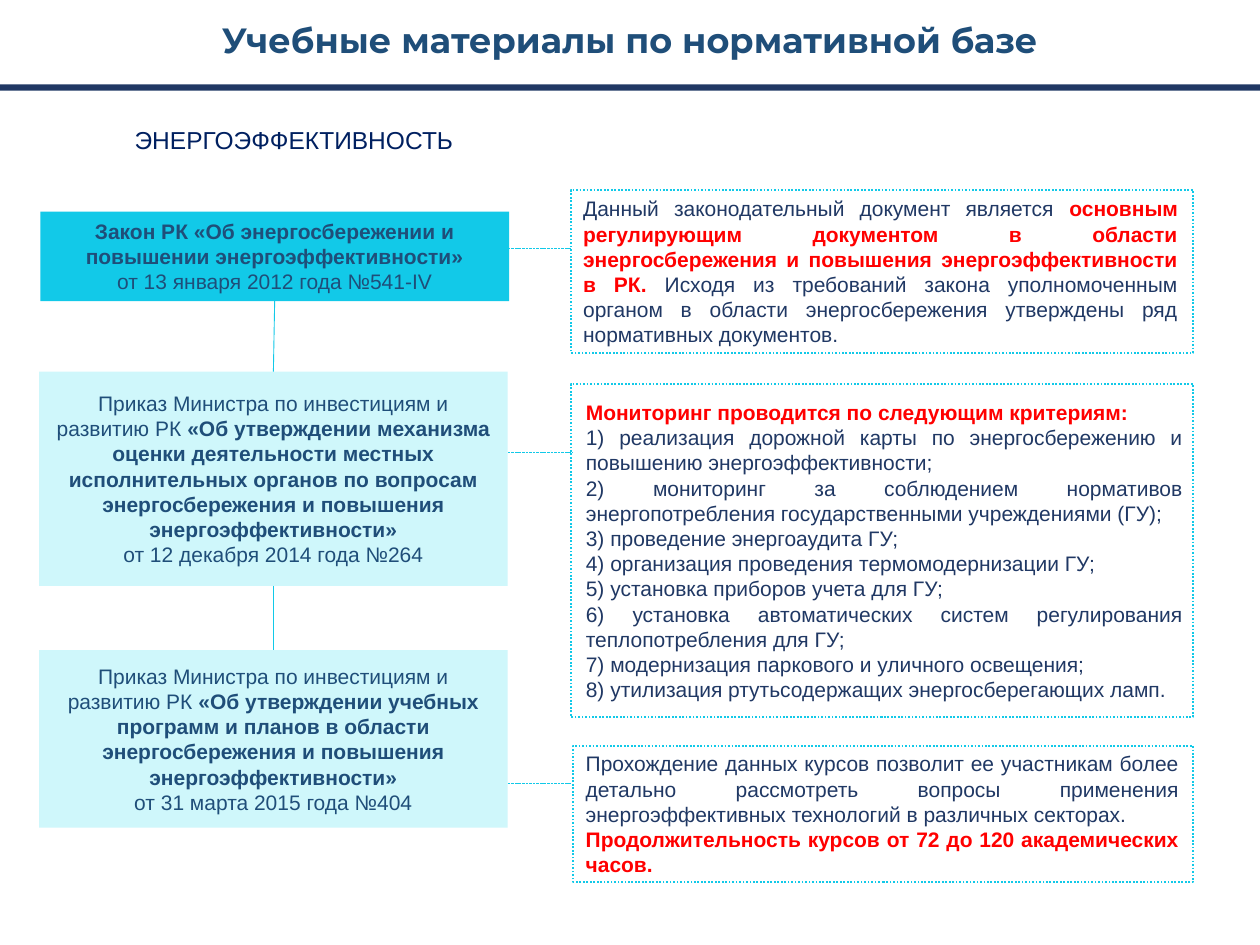
from lxml.etree import SubElement
from pptx import Presentation
from pptx.dml.color import RGBColor
from pptx.enum.dml import MSO_LINE
from pptx.enum.shapes import MSO_CONNECTOR, MSO_SHAPE
from pptx.enum.text import MSO_ANCHOR as ANCHOR, PP_ALIGN as ALIGN
from pptx.oxml.ns import qn
from pptx.util import Inches, Pt

W, H = Inches(10), Inches(7.5)
NAVY, BLUE, RED, CYAN, PALE = "203864", "1F4E79", "FF0000", "12C9E8", "CFF7FB"

CARDS = [
    ((3.2, 22.4, 37.2, 9.47), CYAN, 0.1, [
        [("Закон РК «Об энергосбережении и повышении энергоэффективности»", True)],
        [("от 13 января 2012 года №541-IV", False)]]),
    ((3.1, 39.33, 37.2, 22.67), PALE, 0.05, [
        [("Приказ Министра по инвестициям и", False)],
        [("развитию РК ", False),
         ("«Об утверждении механизма оценки деятельности местных исполнительных "
          "органов по вопросам энергосбережения и повышения энергоэффективности»", True)],
        [("от 12 декабря 2014 года №264", False)]]),
    ((3.1, 68.8, 37.2, 18.8), PALE, 0.05, [
        [("Приказ Министра по инвестициям и", False)],
        [("развитию РК ", False),
         ("«Об утверждении учебных программ и планов в области "
          "энергосбережения и повышения энергоэффективности»", True)],
        [("от 31 марта 2015 года №404", False)]]),
]

CRITERIA = [
    "реализация дорожной карты по энергосбережению и повышению энергоэффективности;",
    "мониторинг за соблюдением нормативов энергопотребления государственными учреждениями (ГУ);",
    "проведение энергоаудита ГУ;",
    "организация проведения термомодернизации ГУ;",
    "установка приборов учета для ГУ;",
    "установка автоматических систем регулирования теплопотребления для ГУ;",
    "модернизация паркового и уличного освещения;",
    "утилизация ртутьсодержащих энергосберегающих ламп.",
]

NOTES = [
    ((45.3, 20.13, 49.4, 17.2), (0.1, 0.12), [
        [("Данный законодательный документ является ", False),
         ("основным регулирующим документом в области энергосбережения "
          "и повышения энергоэффективности в РК. ", True),
         ("Исходя из требований закона уполномоченным органом в области "
          "энергосбережения утверждены ряд нормативных документов.", False)]]),
    ((45.3, 40.67, 49.4, 35.2), (0.12, 0.08), [
        [("Мониторинг проводится по следующим критериям:", True)],
        *([(f"{n}) {text}", False)] for n, text in enumerate(CRITERIA, 1))]),
    ((45.5, 78.93, 49.2, 14.4), (0.1, 0.11), [
        [("Прохождение данных курсов позволит ее участникам более детально рассмотреть "
          "вопросы применения энергоэффективных технологий в различных секторах.", False)],
        [("Продолжительность курсов от 72 до 120 академических часов.", True)]]),
]

LINKS = [(26.27, 45.3), (47.87, 45.5), (82.93, 45.3)]


def rgb(value):
    return RGBColor.from_string(value)


def x(share):
    return int(W * share / 100)


def y(share):
    return int(H * share / 100)


def place(box):
    left, top, width, height = box
    return x(left), y(top), x(width), y(height)


def style(r, size, color, bold=False, font="Arial"):
    r.font.name, r.font.size, r.font.bold = font, Pt(size), bold
    r.font.color.rgb = rgb(color)


def add_rect(slide, box, fill=None):
    sp = slide.shapes.add_shape(MSO_SHAPE.RECTANGLE, *place(box))
    sp.shadow.inherit = False
    sp.line.fill.background()
    if fill:
        sp.fill.solid()
        sp.fill.fore_color.rgb = rgb(fill)
    else:
        sp.fill.background()
    return sp


def write(sp, paragraphs, align, insets, color, bold_color):
    tf = sp.text_frame
    tf.word_wrap = True
    tf.vertical_anchor = ANCHOR.MIDDLE
    tf.margin_left, tf.margin_right = map(Inches, insets)
    tf.margin_top = tf.margin_bottom = Inches(0.05)
    for i, runs in enumerate(paragraphs):
        p = tf.add_paragraph() if i else tf.paragraphs[0]
        p.alignment = align
        for text, bold in runs:
            r = p.add_run()
            r.text = text
            style(r, 12, bold_color if bold else color, bold)


def add_line(slide, start, end, dash=None):
    line = slide.shapes.add_connector(MSO_CONNECTOR.STRAIGHT, *start, *end)
    line.line.color.rgb = rgb(CYAN)
    line.line.width = Pt(0.5)
    if dash:
        line.line.dash_style = dash
    SubElement(line._element.spPr, qn("a:effectLst"))
    return line


def add_header(slide, box):
    title = slide.shapes.title
    title.left, title.top, title.width, title.height = place(box)
    tf = title.text_frame
    tf.text = "Учебные материалы по нормативной базе"
    tf.vertical_anchor = ANCHOR.MIDDLE
    p = tf.paragraphs[0]
    p.alignment = ALIGN.CENTER
    style(p.runs[0], 20, BLUE, True, "Montserrat")
    add_rect(slide, (0, 8.93, 100, 0.67), NAVY)


def add_heading(slide, box):
    tf = slide.shapes.add_textbox(*place(box)).text_frame
    tf.word_wrap = True
    tf.text = "ЭНЕРГОЭФФЕКТИВНОСТЬ"
    p = tf.paragraphs[0]
    p.alignment, p.line_spacing = ALIGN.JUSTIFY, 1.15
    style(p.runs[0], 14, "002060")


def add_card(slide, box, fill, inset, paragraphs):
    sp = add_rect(slide, box, fill)
    write(sp, paragraphs, ALIGN.CENTER, (inset, inset), BLUE, BLUE)
    return sp


def add_note(slide, box, insets, paragraphs):
    sp = add_rect(slide, box)
    sp.line.color.rgb = rgb(CYAN)
    sp.line.width = Pt(1)
    sp.line.dash_style = MSO_LINE.SQUARE_DOT
    sp.line.dash_style = MSO_LINE.ROUND_DOT
    write(sp, paragraphs, ALIGN.JUSTIFY, insets, NAVY, RED)


def main():
    prs = Presentation()
    prs.slide_width, prs.slide_height = W, H
    slide = prs.slides.add_slide(prs.slide_layouts[5])
    add_header(slide, (0, 1.2, 100, 5.87))
    add_heading(slide, (9.7, 12.13, 75.7, 4.67))
    cards = [add_card(slide, *card) for card in CARDS]
    for upper, lower in zip(cards, cards[1:]):
        line = add_line(slide, (0, 0), (0, 0))
        line.begin_connect(upper, 2)
        line.end_connect(lower, 0)
    for note in NOTES:
        add_note(slide, *note)
    for row, right in LINKS:
        add_line(slide, (x(40.3), y(row)), (x(right), y(row)), MSO_LINE.SQUARE_DOT)
    prs.save("out.pptx")


if __name__ == "__main__":
    main()
